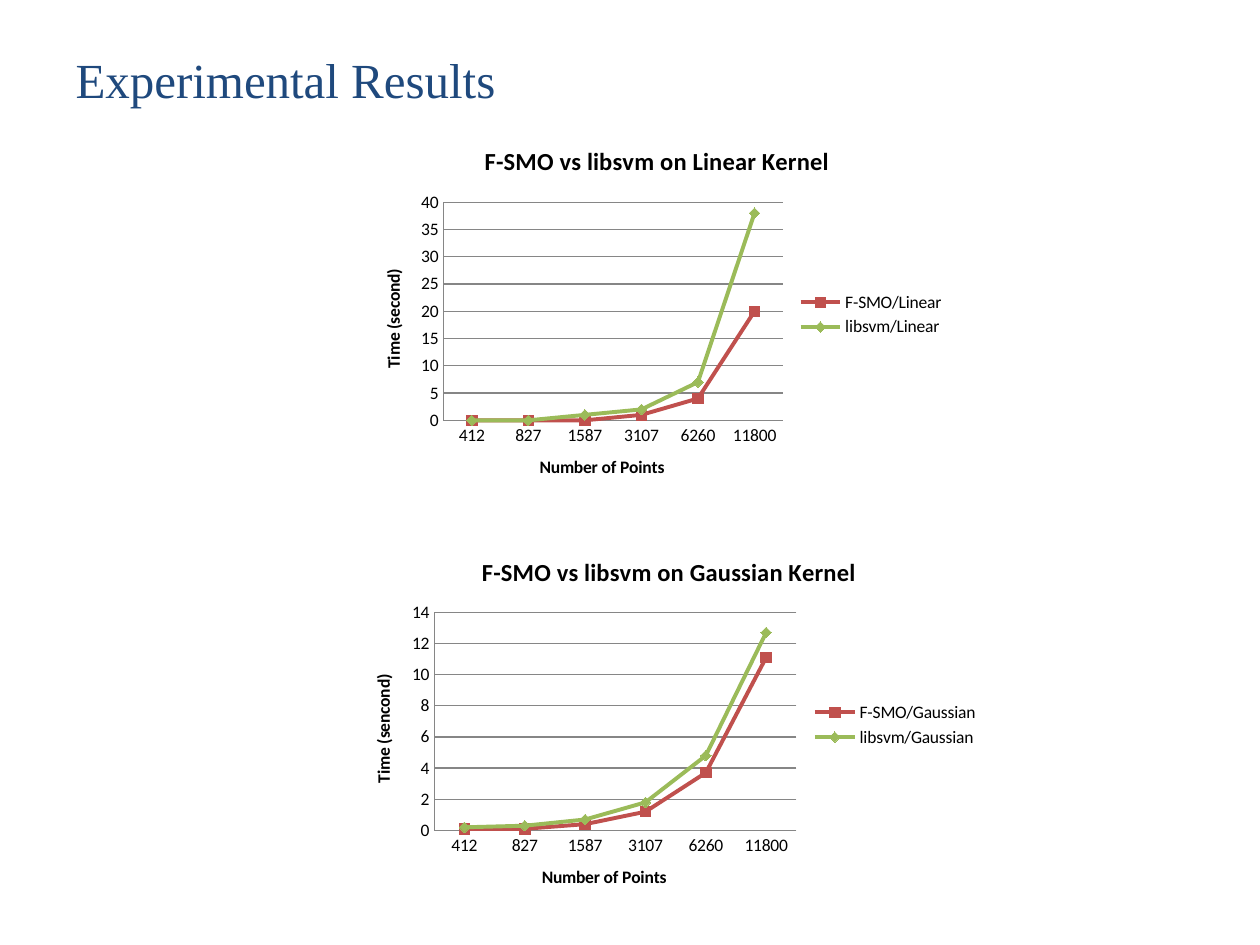
from pptx import Presentation
from pptx.chart.data import CategoryChartData as Data
from pptx.dml.color import RGBColor as Rgb
from pptx.enum.chart import XL_CHART_TYPE as Kind, XL_LEGEND_POSITION as Side
from pptx.enum.chart import XL_MARKER_STYLE as Mark, XL_TICK_MARK as Tick
from pptx.enum.text import MSO_ANCHOR as Anchor, PP_ALIGN as Align
from pptx.util import Inches, Pt

WIDE, HIGH = Inches(10), Inches(7.5)
HUES = {"title": "1F497D", "text": "000000", "grid": "868686",
        "F-SMO": "C0504D", "libsvm": "9BBB59"}
MARKS = {"F-SMO": Mark.SQUARE, "libsvm": Mark.DIAMOND}
SIZES = ["412", "827", "1587", "3107", "6260", "11800"]
CHARTS = [
    ("Gaussian", "Time (sencond)", (0.275, 0.567, 0.512, 0.4),
     {"F-SMO": [0.1, 0.1, 0.4, 1.2, 3.7, 11.1],
      "libsvm": [0.2, 0.3, 0.7, 1.8, 4.8, 12.7]}),
    ("Linear", "Time (second)", (0.283, 0.133, 0.477, 0.4),
     {"F-SMO": [0, 0, 0, 1, 4, 20],
      "libsvm": [0, 0, 1, 2, 7, 38]}),
]


def place(box):
    """Turn shares of the slide into lengths."""
    x, y, w, h = box
    return int(x * WIDE), int(y * HIGH), int(w * WIDE), int(h * HIGH)


def style(font, size=10, hue="text", face="Calibri", bold=False):
    """Format a font."""
    font.size, font.name, font.bold = Pt(size), face, bold
    font.color.rgb = Rgb.from_string(HUES[hue])


def write(frame, text, align=Align.CENTER, **look):
    """Put formatted text in a frame."""
    frame.text = text
    para = frame.paragraphs[0]
    para.alignment = align
    style(para.runs[0].font, **look)


def paint(line, hue, width):
    """Colour a line and set its width."""
    line.color.rgb = Rgb.from_string(HUES[hue])
    line.width = Pt(width)


def head(slide, box, text):
    """Place the slide title."""
    title = slide.shapes.title
    title.left, title.top, title.width, title.height = place(box)
    frame = title.text_frame
    frame.vertical_anchor = Anchor.MIDDLE
    write(frame, text, align=Align.LEFT, size=28, hue="title",
          face="Times New Roman")


def trim(axis, text):
    """Title an axis and hide its ticks."""
    write(axis.axis_title.text_frame, text, bold=True)
    axis.major_tick_mark = axis.minor_tick_mark = Tick.NONE
    paint(axis.format.line, "grid", 0.75)


def graph(slide, box, kernel, unit, times):
    """Place a line chart of run times for one kernel."""
    data = Data()
    data.categories = SIZES
    for name, vals in times.items():
        data.add_series(f"{name}/{kernel}", vals)
    chart = slide.shapes.add_chart(Kind.LINE_MARKERS, *place(box), data).chart
    style(chart.font)
    chart.has_title = True
    write(chart.chart_title.text_frame, f"F-SMO vs libsvm on {kernel} Kernel",
          size=14, bold=True)
    chart.has_legend = True
    chart.legend.position = Side.RIGHT
    chart.legend.include_in_layout = False
    trim(chart.category_axis, "Number of Points")
    axis = chart.value_axis
    trim(axis, unit)
    axis.tick_labels.number_format = "General"
    axis.tick_labels.number_format_is_linked = False
    axis.has_major_gridlines = True
    paint(axis.major_gridlines.format.line, "grid", 0.75)
    plot = chart.plots[0]
    plot.vary_by_categories = False
    for name, line in zip(times, plot.series):
        line.smooth = False
        paint(line.format.line, name, 2.25)
        mark = line.marker
        mark.style, mark.size = MARKS[name], 6
        mark.format.fill.solid()
        mark.format.fill.fore_color.rgb = Rgb.from_string(HUES[name])
        paint(mark.format.line, name, 0.75)


def main():
    """Build and save the slide."""
    deck = Presentation()
    deck.slide_width, deck.slide_height = WIDE, HIGH
    slide = deck.slides.add_slide(deck.slide_layouts[5])
    head(slide, (0.05, 0, 0.85, 0.167), "Experimental Results")
    for kernel, unit, box, times in CHARTS:
        graph(slide, box, kernel, unit, times)
    deck.save("out.pptx")


if __name__ == "__main__":
    main()
